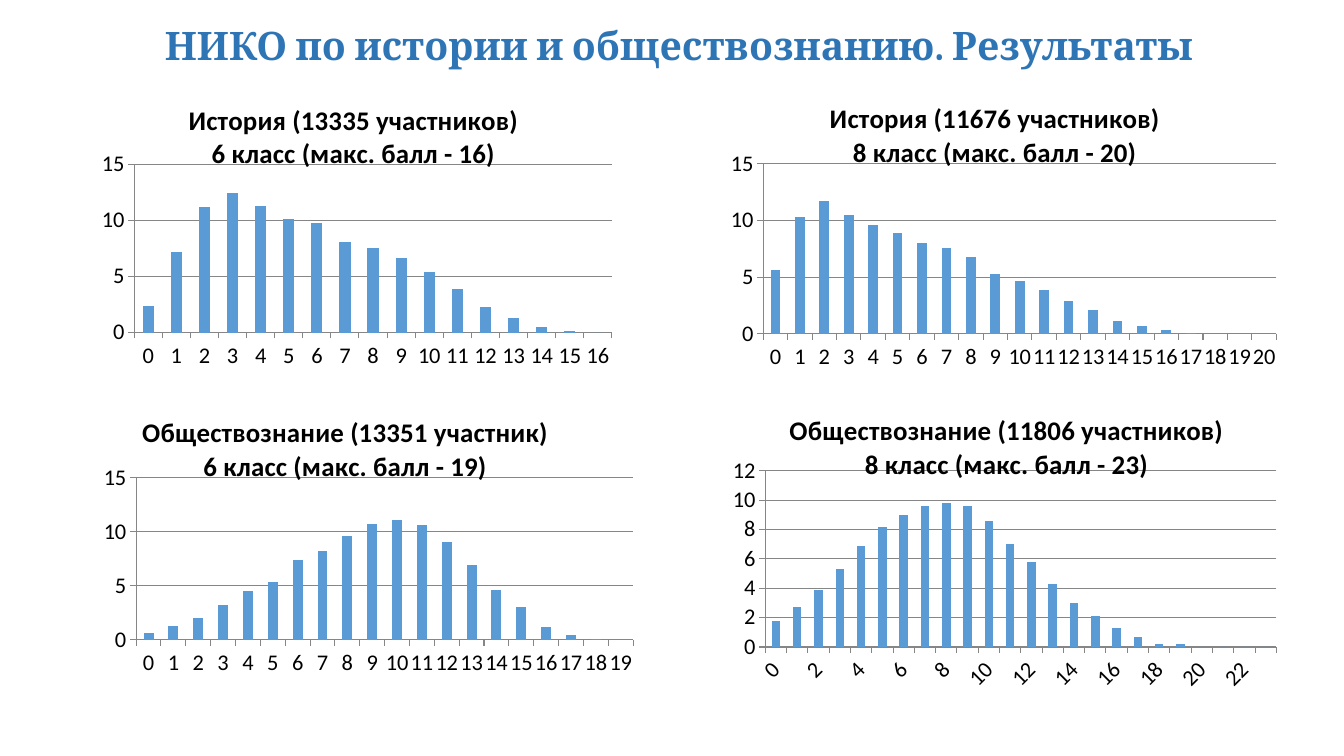
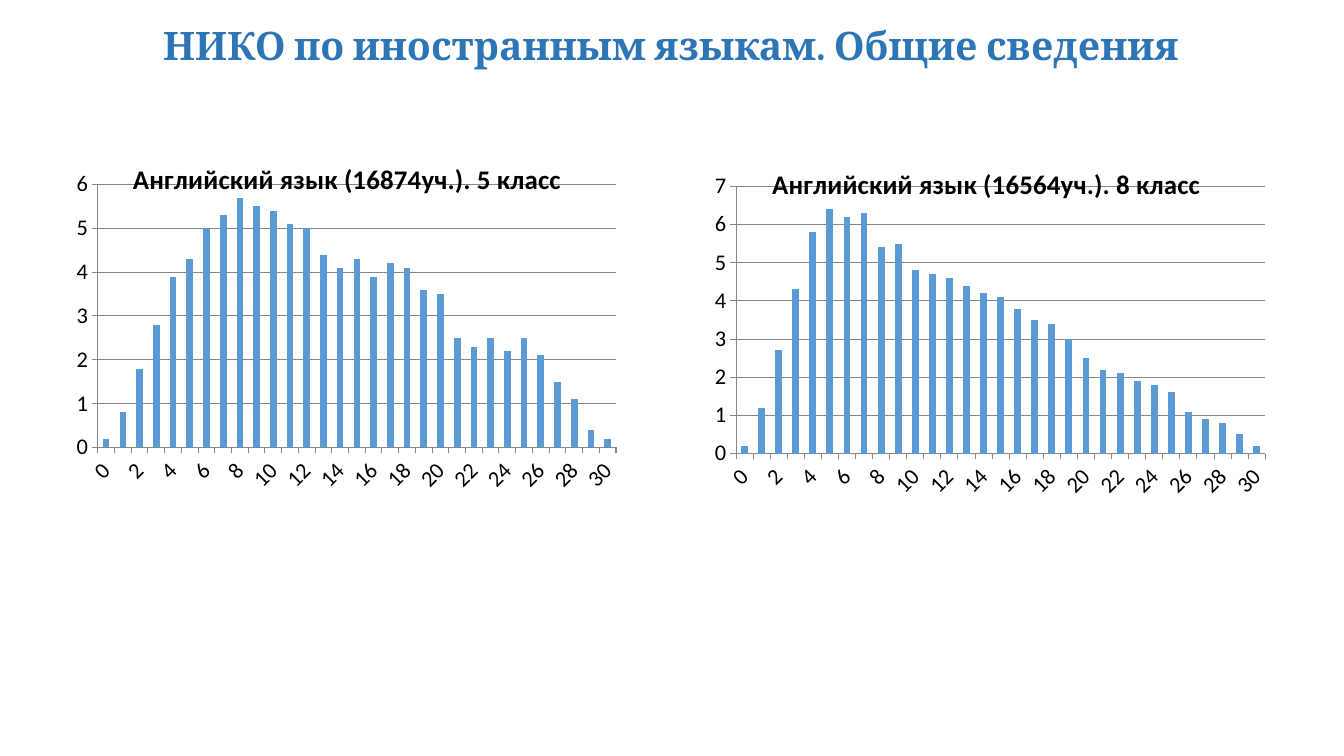
from dataclasses import dataclass

from lxml.etree import SubElement
from pptx import Presentation
from pptx.chart.axis import CategoryAxis, ValueAxis
from pptx.chart.chart import Chart
from pptx.chart.data import CategoryChartData
from pptx.dml.color import RGBColor
from pptx.enum.chart import XL_CHART_TYPE, XL_TICK_MARK
from pptx.enum.text import MSO_ANCHOR, MSO_AUTO_SIZE, PP_ALIGN
from pptx.oxml import parse_xml
from pptx.oxml.ns import nsdecls, qn
from pptx.oxml.xmlchemy import BaseOxmlElement
from pptx.presentation import Presentation as Deck
from pptx.slide import Slide
from pptx.text.text import Font
from pptx.util import Inches, Pt

HEADING_BLUE = "2E75B6"
BAR_BLUE = "5B9BD5"
AXIS_GREY = "868686"
BLACK = "000000"
HEADING_FONT = "Cambria"
CHART_FONT = "Calibri"


@dataclass(frozen=True)
class Box:
    left: float
    top: float
    width: float
    height: float


@dataclass(frozen=True)
class Distribution:
    caption: tuple[str, ...]
    frame: Box
    plot: Box
    caption_left: float
    caption_top: float
    axis_max: int
    axis_step: int
    percents: tuple[float, ...]


@dataclass(frozen=True)
class Page:
    heading: str
    heading_left: float
    distributions: tuple[Distribution, ...]


PAGES = (
    Page("НИКО по истории и обществознанию. Результаты", 1.11, (
        Distribution(
            ("История (13335 участников)", "6 класс (макс. балл - 16)"),
            Box(0.74, 0.93, 5.49, 2.76), Box(1.33, 1.63, 4.74, 1.67),
            1.84, 0.98, 15, 5,
            (2.4, 7.2, 11.2, 12.4, 11.3, 10.1, 9.8, 8.1, 7.5, 6.6, 5.4, 3.9,
             2.3, 1.3, 0.5, 0.1, 0),
        ),
        Distribution(
            ("История (11676 участников)", "8 класс (макс. балл - 20)"),
            Box(6.93, 0.82, 5.91, 2.86), Box(7.57, 1.63, 5.09, 1.69),
            8.2, 0.97, 15, 5,
            (5.6, 10.3, 11.7, 10.5, 9.6, 8.9, 8, 7.6, 6.8, 5.3, 4.7, 3.9,
             2.9, 2.1, 1.1, 0.7, 0.3, 0.1, 0, 0, 0),
        ),
        Distribution(
            ("Обществознание (13351 участник)", "6 класс (макс. балл - 19)"),
            Box(0.78, 4.06, 5.64, 2.73), Box(1.35, 4.74, 4.93, 1.61),
            1.38, 4.08, 15, 5,
            (0.6, 1.3, 2, 3.2, 4.5, 5.4, 7.4, 8.2, 9.6, 10.7, 11.1, 10.6,
             9.1, 6.9, 4.6, 3, 1.2, 0.5, 0.1, 0),
        ),
        Distribution(
            ("Обществознание (11806 участников)", "8 класс (макс. балл - 23)"),
            Box(7.03, 3.92, 5.92, 2.96), Box(7.59, 4.67, 5.07, 1.75),
            7.8, 4.06, 12, 2,
            (1.8, 2.7, 3.9, 5.3, 6.9, 8.2, 9, 9.6, 9.8, 9.6, 8.6, 7, 5.8,
             4.3, 3, 2.1, 1.3, 0.7, 0.2, 0.2, 0, 0, 0, 0),
        ),
    )),
    Page("НИКО по иностранным языкам. Общие сведения", 1.03, (
        Distribution(
            ("Английский язык (16874уч.). 5 класс",),
            Box(0.49, 1.49, 5.82, 3.6), Box(0.97, 1.83, 5.14, 2.61),
            1.27, 1.54, 6, 1,
            (0.2, 0.8, 1.8, 2.8, 3.9, 4.3, 5, 5.3, 5.7, 5.5, 5.4, 5.1, 5,
             4.4, 4.1, 4.3, 3.9, 4.2, 4.1, 3.6, 3.5, 2.5, 2.3, 2.5, 2.2,
             2.5, 2.1, 1.5, 1.1, 0.4, 0.2),
        ),
        Distribution(
            ("Английский язык (16564уч.). 8 класс",),
            Box(6.72, 1.28, 6.08, 3.89), Box(7.3, 1.85, 5.25, 2.65),
            7.61, 1.59, 7, 1,
            (0.2, 1.2, 2.7, 4.3, 5.8, 6.4, 6.2, 6.3, 5.4, 5.5, 4.8, 4.7,
             4.6, 4.4, 4.2, 4.1, 3.8, 3.5, 3.4, 3, 2.5, 2.2, 2.1, 1.9, 1.8,
             1.6, 1.1, 0.9, 0.8, 0.5, 0.2),
        ),
    )),
)


def color(hex_code: str) -> RGBColor:
    return RGBColor.from_string(hex_code)


def style_font(font: Font, family: str, size: float, hex_code: str, bold: bool) -> None:
    font.name = family
    font.size = Pt(size)
    font.bold = bold
    font.color.rgb = color(hex_code)


def add_heading(slide: Slide, page: Page) -> None:
    heading = slide.shapes.title
    heading.left, heading.top = Inches(page.heading_left), Inches(0.16)
    heading.width, heading.height = Inches(11.25), Inches(0.57)
    frame = heading.text_frame
    frame.word_wrap = True
    frame.auto_size = MSO_AUTO_SIZE.NONE
    frame.vertical_anchor = MSO_ANCHOR.BOTTOM
    paragraph = frame.paragraphs[0]
    paragraph.alignment = PP_ALIGN.CENTER
    paragraph.line_spacing = 0.9
    run = paragraph.add_run()
    run.text = page.heading
    style_font(run.font, HEADING_FONT, 28, HEADING_BLUE, True)


def set_layout(parent: BaseOxmlElement, index: int, settings: dict[str, str | float]) -> None:
    for previous in parent.findall(qn("c:layout")):
        parent.remove(previous)
    layout = parse_xml(f"<c:layout {nsdecls('c')}><c:manualLayout/></c:layout>")
    for tag, value in settings.items():
        SubElement(layout[0], qn(f"c:{tag}")).set("val", str(value))
    parent.insert(index, layout)


def edge_position(left: float, top: float, frame: Box) -> dict[str, str | float]:
    return {
        "xMode": "edge",
        "yMode": "edge",
        "x": (left - frame.left) / frame.width,
        "y": (top - frame.top) / frame.height,
    }


def place_plot(chart: Chart, item: Distribution) -> None:
    position = edge_position(item.plot.left, item.plot.top, item.frame)
    size = {
        "w": item.plot.width / item.frame.width,
        "h": item.plot.height / item.frame.height,
    }
    plot_area = chart.element.find(f"{qn('c:chart')}/{qn('c:plotArea')}")
    set_layout(plot_area, 0, {"layoutTarget": "inner"} | position | size)


def add_caption(chart: Chart, item: Distribution) -> None:
    chart.has_title = True
    frame = chart.chart_title.text_frame
    for number, line in enumerate(item.caption):
        paragraph = frame.add_paragraph() if number else frame.paragraphs[0]
        paragraph.alignment = PP_ALIGN.CENTER
        run = paragraph.add_run()
        run.text = line
        style_font(run.font, CHART_FONT, 19.2, BLACK, True)
    position = edge_position(item.caption_left, item.caption_top, item.frame)
    set_layout(chart.chart_title.element, 1, position)


def style_axis(axis: CategoryAxis | ValueAxis) -> None:
    axis.major_tick_mark = XL_TICK_MARK.OUTSIDE
    axis.minor_tick_mark = XL_TICK_MARK.NONE
    axis.format.line.color.rgb = color(AXIS_GREY)
    axis.format.line.width = Pt(0.75)


def add_distribution(slide: Slide, item: Distribution) -> None:
    data = CategoryChartData()
    data.categories = [str(score) for score in range(len(item.percents))]
    data.add_series("Series 1", item.percents)
    frame = item.frame
    chart = slide.shapes.add_chart(
        XL_CHART_TYPE.COLUMN_CLUSTERED,
        Inches(frame.left), Inches(frame.top),
        Inches(frame.width), Inches(frame.height), data,
    ).chart
    style_font(chart.font, CHART_FONT, 16, BLACK, False)
    chart.has_legend = False
    add_caption(chart, item)
    place_plot(chart, item)

    columns = chart.plots[0]
    columns.gap_width = 150
    columns.vary_by_categories = False
    bars = columns.series[0]
    bars.invert_if_negative = False
    bars.format.fill.solid()
    bars.format.fill.fore_color.rgb = color(BAR_BLUE)

    percent_axis = chart.value_axis
    for axis in (chart.category_axis, percent_axis):
        style_axis(axis)
    percent_axis.minimum_scale = 0
    percent_axis.maximum_scale = item.axis_max
    percent_axis.major_unit = item.axis_step
    percent_axis.has_major_gridlines = True
    gridline = percent_axis.major_gridlines.format.line
    gridline.color.rgb = color(AXIS_GREY)
    gridline.width = Pt(0.75)


def add_page(deck: Deck, page: Page) -> None:
    slide = deck.slides.add_slide(deck.slide_layouts.get_by_name("Title Only"))
    add_heading(slide, page)
    for item in page.distributions:
        add_distribution(slide, item)


def main() -> None:
    deck = Presentation()
    deck.slide_width, deck.slide_height = Inches(13.33), Inches(7.5)
    for page in PAGES:
        add_page(deck, page)
    deck.save("out.pptx")


if __name__ == "__main__":
    main()
